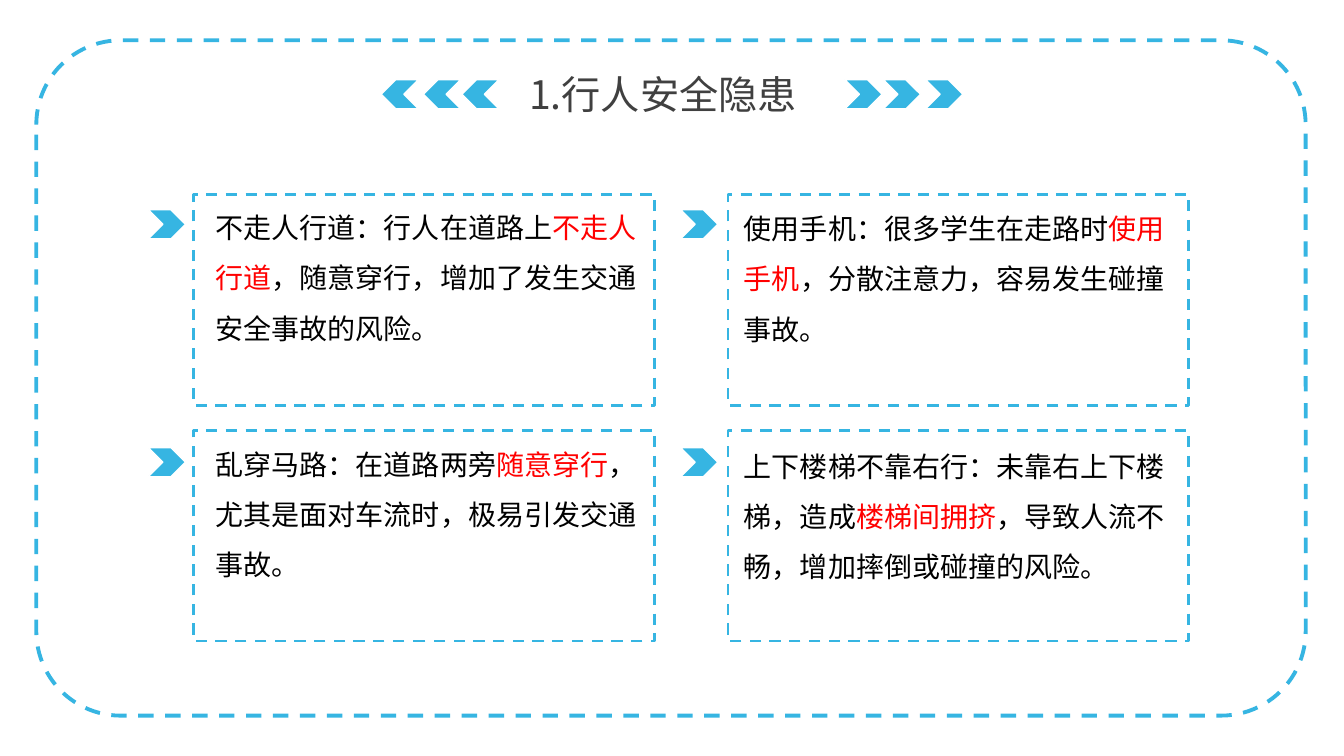
import pptx
import pptx.util
import pptx.dml.color
import pptx.enum.dml
import pptx.enum.shapes
import pptx.enum.text
import pptx.oxml.ns
import lxml.etree

PX = 9144  # EMU per px, 100 px to the inch
FONT = "Noto Sans CJK SC"
COLORS = {"blue": "36B5E2", "white": "FFFFFF", "title": "404040",
          "body": "000000", "key": "FF0000"}
SHAPE = pptx.enum.shapes.MSO_SHAPE

CARD_W, CARD_H = 457, 209
ARROW_W, ARROW_H = 37, 29
# Each card: box corner, arrow offset, text offset and width, text around its key words
CARDS = [
    ((192, 193), (-45, 15), (12, -6), 448,
     ("不走人行道：行人在道路上", "不走人行道", "，随意穿行，增加了发生交通安全事故的风险。")),
    ((192, 427), (-45, 17), (12, -5), 448,
     ("乱穿马路：在道路两旁", "随意穿行", "，尤其是面对车流时，极易引发交通事故。")),
    ((722, 193), (-47, 15), (6, -5), 457,
     ("使用手机：很多学生在走路时", "使用手机", "，分散注意力，容易发生碰撞事故。")),
    ((722, 427), (-47, 17), (6, -3), 457,
     ("上下楼梯不靠右行：未靠右上下楼梯，造成", "楼梯间拥挤", "，导致人流不畅，增加摔倒或碰撞的风险。")),
]


def rgb(name):
    return pptx.dml.color.RGBColor.from_string(COLORS[name])


def add_shape(s, kind, x, y, w, h, fill, line, weight, dashed=False):
    sp = s.shapes.add_shape(kind, x * PX, y * PX, w * PX, h * PX)
    sp.shadow.inherit = False
    if fill:
        sp.fill.solid()
        sp.fill.fore_color.rgb = rgb(fill)
    else:
        sp.fill.background()
    sp.line.color.rgb = rgb(line)
    sp.line.width = pptx.util.Pt(weight)
    if dashed:
        sp.line.dash_style = pptx.enum.dml.MSO_LINE.DASH
    return sp


def add_arrow(s, x, y):
    return add_shape(s, SHAPE.CHEVRON, x, y, ARROW_W, ARROW_H, "blue", "white", 1)


def add_text(s, x, y, w, h, parts, size, color):
    """Write one paragraph; every second part is a key phrase."""
    tf = s.shapes.add_textbox(x * PX, y * PX, w * PX, h * PX).text_frame
    tf.word_wrap = True
    tf.auto_size = pptx.enum.text.MSO_AUTO_SIZE.SHAPE_TO_FIT_TEXT
    p = tf.paragraphs[0]
    p.font.size = pptx.util.Pt(size)
    p.font.name = FONT
    p.font.color.rgb = rgb(color)
    # East Asian typeface
    props = p._p.find(".//" + pptx.oxml.ns.qn("a:defRPr"))
    lxml.etree.SubElement(props, pptx.oxml.ns.qn("a:ea"), typeface=FONT)
    for i, part in enumerate(parts):
        r = p.add_run()
        r.text = part
        if i % 2:
            r.font.color.rgb = rgb("key")
    return p


def add_frame(s, x, y, w, h):
    sp = add_shape(s, SHAPE.ROUNDED_RECTANGLE, x, y, w, h, "white", "blue", 2.75, True)
    sp.adjustments[0] = 0.125


def add_title(s, x, y, w, h):
    p = add_text(s, x + 137, y, 304, h, ["1.行人安全隐患"], 28, "title")
    p.alignment = pptx.enum.text.PP_ALIGN.JUSTIFY
    # Arrows mirrored about the middle of the title
    for dx in (0, 42, 80):
        add_arrow(s, x + dx, y + 14).rotation = 180
        add_arrow(s, x + w - ARROW_W - dx, y + 14)


def add_card(s, x, y, arrow, text, text_w, parts):
    p = add_text(s, x + text[0], y + text[1], text_w, 161, parts, 20, "body")
    p.line_spacing = 1.5
    add_shape(s, SHAPE.RECTANGLE, x, y, CARD_W, CARD_H, None, "blue", 2, True)
    add_arrow(s, x + arrow[0], y + arrow[1])


def main():
    prs = pptx.Presentation()
    prs.slide_width, prs.slide_height = 1333 * PX, 750 * PX
    s = prs.slides.add_slide(prs.slide_layouts[6])
    add_frame(s, 36, 40, 1259, 670)
    add_title(s, 378, 65, 577, 57)
    for (x, y), arrow, text, text_w, parts in CARDS:
        add_card(s, x, y, arrow, text, text_w, parts)
    prs.save("out.pptx")


if __name__ == "__main__":
    main()
